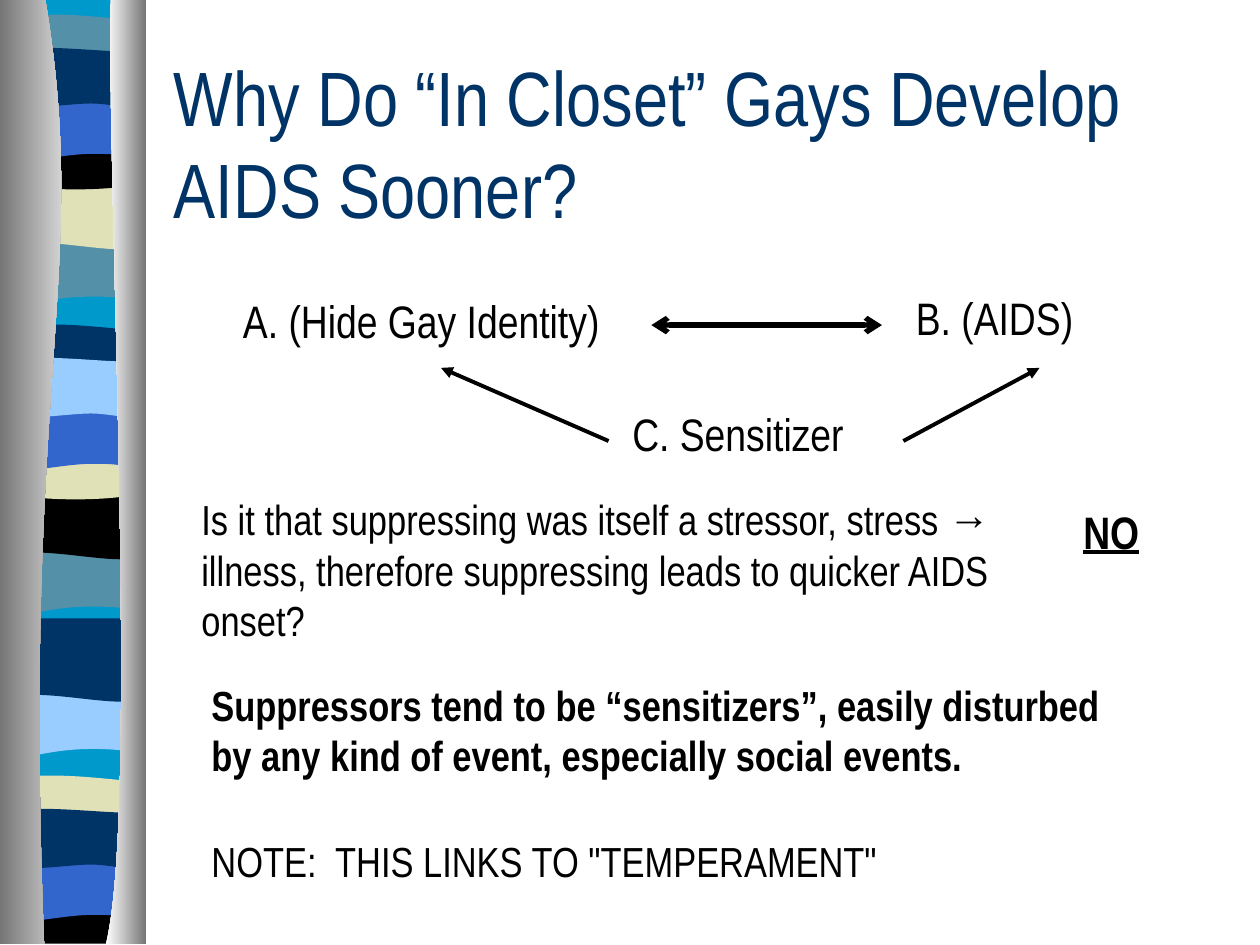
from lxml.etree import SubElement
from pptx import Presentation
from pptx.dml.color import RGBColor
from pptx.enum.shapes import MSO_CONNECTOR
from pptx.enum.text import MSO_ANCHOR, MSO_AUTO_SIZE, PP_ALIGN
from pptx.oxml.ns import qn
from pptx.util import Inches, Pt

FONT = "Arial Narrow"
BLACK, NAVY, GREY, WHITE = "000000", "003366", "767676", "FFFFFF"
TEAL, SAND, BLUE, SKY, CYAN = "5490A8", "E1E1B7", "3366CC", "99CCFF", "0099CC"
LEFT, RIGHT = 0.05, 1.14
SWELL = 4 / 3  # bands overlap their neighbours above and below

# Outlines: (x, y) is a corner, (x1, y1, x2, y2, x, y) a curve.
# Each band is measured down from its own top right corner.
DIP = [(RIGHT, 0), (RIGHT, 0.47), (0.39, 0.39, 0.24, 0.55, LEFT, 0.47), (LEFT, 0)]
RISE = [(RIGHT, 0), (RIGHT, 0.47), (0.96, 0.55, 0.39, 0.41, LEFT, 0.47), (LEFT, 0)]
THIN = [(RIGHT, 0), (RIGHT, 0.24), (0.96, 0.29, 0.24, 0.29, LEFT, 0.24), (LEFT, 0),
        (0.12, -0.05, 0.29, -0.04, 0.47, -0.04), (0.65, -0.04, 1, -0.01, RIGHT, 0)]
SAG = [(RIGHT, 0), (RIGHT, 0.32), (0.96, 0.38, 0.24, 0.38, LEFT, 0.32), (LEFT, 0),
       (0.72, 0.05, 0.91, 0, RIGHT, 0)]
FOOT = [(RIGHT, 0), (RIGHT, 0.37), (LEFT, 0.37), (LEFT, 0),
        (0.72, 0.05, 0.91, 0, RIGHT, 0)]
ARCH = [(RIGHT, 0), (RIGHT, 0.47), (0.97, 0.42, 0.9, 0.42, 0.72, 0.42),
        (0.54, 0.42, 0.22, 0.47, LEFT, 0.47), (LEFT, 0)]
WAVE = [(RIGHT, 0), (RIGHT, 0.31), (1.07, 0.36, 0.9, 0.31, 0.72, 0.31),
        (0.54, 0.31, 0.17, 0.36, LEFT, 0.31), (LEFT, 0),
        (0.21, -0.05, 0.79, 0, 0.97, 0), (1.15, 0, 1.1, 0, RIGHT, 0)]

# The run of bands repeats down the strip; the last run is stretched.
TOPS = [1.85, 1.41, 0.21, 1.08, 0.74, 0.46]
RUNS = [
    ([0] * 6, [DIP, RISE, THIN, SAG, ARCH, WAVE],
     [TEAL, SAND, TEAL, BLACK, BLUE, NAVY]),
    ([2.46] * 6, [DIP, RISE, THIN, SAG, ARCH, WAVE],
     [TEAL, BLACK, NAVY, SAND, BLUE, SKY]),
    ([3.59] * 2 + [6.04] * 4, [DIP, RISE, THIN, FOOT, ARCH, WAVE],
     [SKY, NAVY, SAND, BLACK, BLUE, NAVY]),
]
EDGES = [
    ([(0.36, 0), (0.72, 2.16, 0.17, 2.96, 0.35, 7.49), (0, 7.49), (0, 0)],
     GREY, WHITE),
    ([(0.88, 0), (0.84, 1.25, 1.11, 6.46, 0.84, 7.49), (1.16, 7.49), (1.16, 0)],
     WHITE, GREY),
]


def rgb(code):
    return RGBColor.from_string(code)


def add_form(slide, outline, top=0, swell=1):
    """Draw an outline with true curves, swollen about its middle height."""
    first, *rest = [(Inches(p[-2]), Inches(top + p[-1])) for p in outline]
    pen = slide.shapes.build_freeform(*first)
    pen.add_line_segments(rest, close=True)
    shape = pen.convert_to_shape()
    shape.shadow.inherit = False
    shape.line.fill.background()

    xs = [x for p in outline for x in p[::2]]
    ys = [y for p in outline for y in p[1::2]]
    mid = (min(ys) + max(ys)) / 2
    shape.left, shape.top = Inches(min(xs)), Inches(top + min(ys))
    shape.width = Inches(max(xs) - min(xs))
    shape.height = Inches(max(ys) - min(ys))

    track = next(shape._element.iter(qn("a:path")))
    track.set("w", str(shape.width))
    track.set("h", str(shape.height))
    for child in list(track):
        track.remove(child)
    for index, part in enumerate(outline):
        kind = "cubicBezTo" if len(part) == 6 else "lnTo" if index else "moveTo"
        step = SubElement(track, qn(f"a:{kind}"))
        for x, y in zip(part[::2], part[1::2]):
            y = mid + (y - mid) * swell
            SubElement(step, qn("a:pt"), x=str(Inches(x - min(xs))),
                       y=str(Inches(y - min(ys))))
    SubElement(track, qn("a:close"))
    return shape


def add_band(slide, outline, top, color, swell=1):
    fill = add_form(slide, outline, top, swell).fill
    fill.solid()
    fill.fore_color.rgb = rgb(color)


def add_edge(slide, outline, start, end):
    fill = add_form(slide, outline).fill
    fill.gradient()
    fill.gradient_angle = 0
    for stop, color, place in zip(fill.gradient_stops, (start, end), (0, 1)):
        stop.color.rgb = rgb(color)
        stop.position = place


def add_strip(slide):
    base = [(RIGHT, 0), (RIGHT, 7.47), (LEFT, 7.47), (LEFT, 0)]
    add_band(slide, base, 0, CYAN)
    for shifts, forms, colors in RUNS:
        for top, shift, form, color in zip(TOPS, shifts, forms, colors):
            swell = 1 if form is FOOT else SWELL
            add_band(slide, form, top + shift, color, swell)
    for edge in EDGES:
        add_edge(slide, *edge)


def style(para, size, color=BLACK, bold=False, line=False):
    font = para.font
    font.name, font.size, font.bold = FONT, Pt(size), bold
    font.underline = line
    font.color.rgb = rgb(color)


def set_title(slide, text):
    title = slide.shapes.title
    title.left, title.top = Inches(1.28), Inches(0.5)
    title.width, title.height = Inches(8.5), Inches(1.25)
    frame = title.text_frame
    frame.text = text
    frame.auto_size = MSO_AUTO_SIZE.NONE
    frame.vertical_anchor = MSO_ANCHOR.MIDDLE
    para = frame.paragraphs[0]
    para.alignment = PP_ALIGN.LEFT
    style(para, 44, NAVY)


def add_text(slide, box, text, size, **look):
    shape = slide.shapes.add_textbox(*map(Inches, box))
    frame = shape.text_frame
    frame.word_wrap = True
    frame.auto_size = MSO_AUTO_SIZE.SHAPE_TO_FIT_TEXT
    frame.text = text
    style(frame.paragraphs[0], size, **look)
    return frame


def add_arrow(slide, start, end, width, **heads):
    """Draw a line; heads maps headEnd or tailEnd to an arrowhead type."""
    line = slide.shapes.add_connector(
        MSO_CONNECTOR.STRAIGHT, *map(Inches, start + end))
    line.line.width = Pt(width)
    line.line.color.rgb = rgb(BLACK)
    for name, kind in heads.items():
        SubElement(line.line._get_or_add_ln(), qn(f"a:{name}"), type=kind)
    SubElement(line._element.spPr, qn("a:effectLst"))


def main():
    deck = Presentation()
    deck.slide_width, deck.slide_height = Inches(10), Inches(7.5)
    slide = deck.slides.add_slide(deck.slide_layouts[5])
    add_strip(slide)
    set_title(slide, "Why Do “In Closet” Gays Develop AIDS Sooner?")

    frame = add_text(
        slide, (1.58, 5.34, 7.58, 1.8),
        "Suppressors tend to be “sensitizers”, easily disturbed by any kind "
        "of event, especially social events.", 24, bold=True)
    note = frame.add_paragraph()
    note.text = "NOTE:  THIS LINKS TO \"TEMPERAMENT\""
    note.space_before = Pt(32)
    style(note, 24)

    add_text(slide, (1.5, 3.87, 6.5, 1.3),
             "Is it that suppressing was itself a stressor, stress → illness, "
             "therefore suppressing leads to quicker AIDS onset?", 24)
    add_text(slide, (8.5, 3.95, 0.83, 1.13), "NO", 26, bold=True, line=True)

    add_text(slide, (1.83, 2.28, 5.67, 0.53), "A. (Hide Gay Identity)", 26)
    add_text(slide, (7.17, 2.25, 2, 0.53), "B. (AIDS)", 26)
    add_text(slide, (4.92, 3.17, 2.17, 0.53), "C. Sensitizer", 26)
    add_arrow(slide, (5.17, 2.58), (7, 2.58), 3, headEnd="arrow", tailEnd="arrow")
    add_arrow(slide, (4.83, 3.5), (3.5, 2.92), 2.25, tailEnd="triangle")
    add_arrow(slide, (7.17, 3.5), (8.25, 2.92), 2.25, tailEnd="triangle")
    deck.save("out.pptx")


if __name__ == "__main__":
    main()
